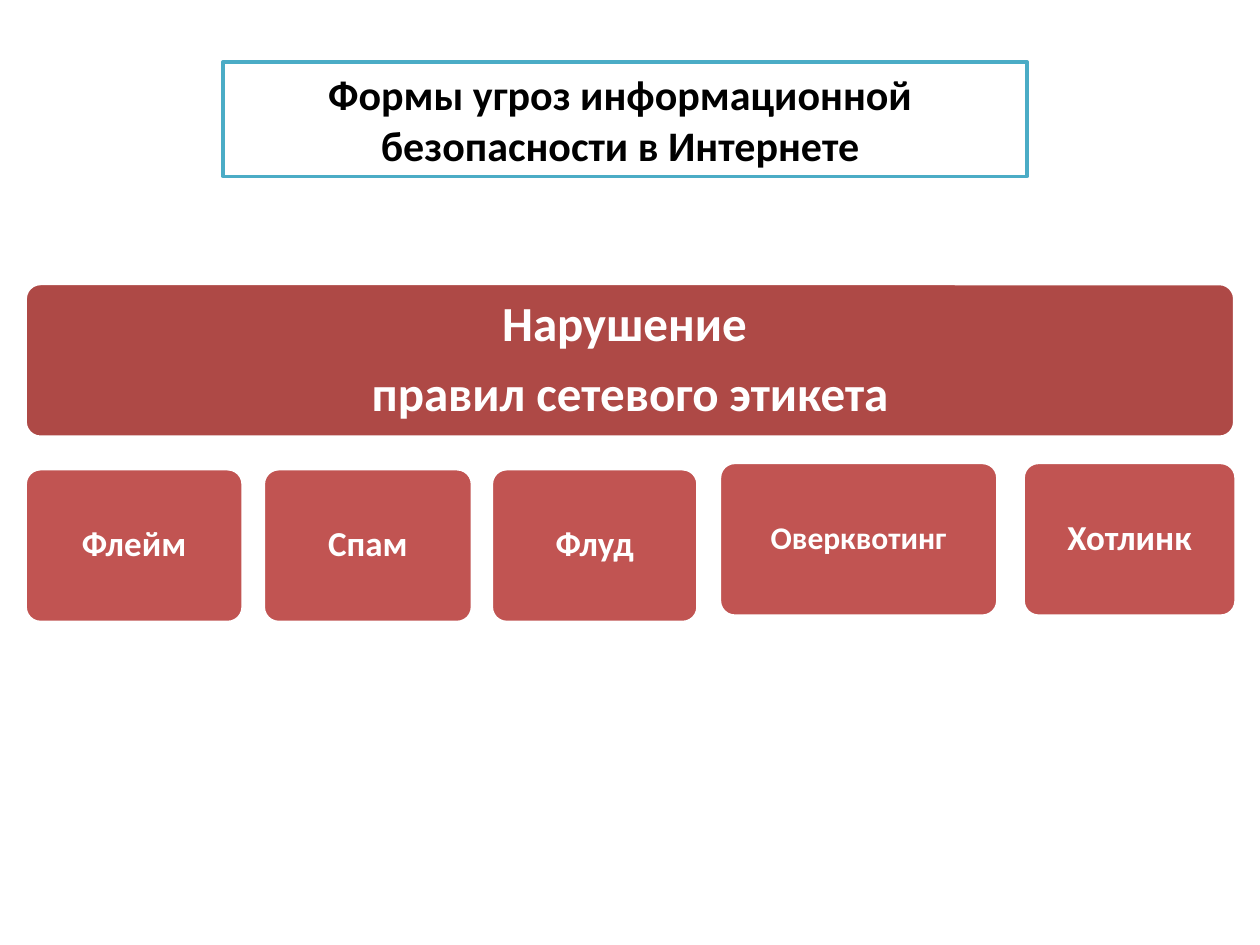
from dataclasses import dataclass

from pptx import Presentation
from pptx.dml.color import RGBColor
from pptx.enum import shapes, text
from pptx.util import Inches, Pt


@dataclass(frozen=True)
class Theme:
    font: str = "Calibri"
    white: RGBColor = RGBColor(0xFF, 0xFF, 0xFF)
    black: RGBColor = RGBColor(0x00, 0x00, 0x00)
    frame: RGBColor = RGBColor(0x4B, 0xAC, 0xC6)
    banner: RGBColor = RGBColor(0xAE, 0x49, 0x46)
    tile: RGBColor = RGBColor(0xC1, 0x54, 0x52)
    title_size: int = 24
    banner_size: int = 28
    tile_size: int = 20
    long_tile_size: int = 18
    line_width: int = 2


THEME = Theme()
CARD_HEIGHT = 1.22


def place(shape, box):
    shape.left, shape.top, shape.width, shape.height = map(Inches, box)


def paint(shape, fill, line):
    shape.fill.solid()
    shape.fill.fore_color.rgb = fill
    shape.line.color.rgb = line
    shape.line.width = Pt(THEME.line_width)


def write_lines(shape, lines, size, color, line_spacing=1.0, gap=0):
    frame = shape.text_frame
    frame.word_wrap = True
    frame.auto_size = text.MSO_AUTO_SIZE.NONE
    frame.vertical_anchor = text.MSO_ANCHOR.MIDDLE
    for index, line in enumerate(lines):
        paragraph = frame.add_paragraph() if index else frame.paragraphs[0]
        paragraph.alignment = text.PP_ALIGN.CENTER
        paragraph.line_spacing = line_spacing
        if index < len(lines) - 1:
            paragraph.space_after = Pt(gap)
        run = paragraph.add_run()
        run.text = line
        run.font.name = THEME.font
        run.font.size = Pt(size)
        run.font.bold = True
        run.font.color.rgb = color


def add_title(slide, box):
    title = slide.shapes.title
    place(title, box)
    paint(title, THEME.white, THEME.frame)
    lines = ["Формы угроз информационной ", "безопасности в Интернете "]
    write_lines(title, lines, THEME.title_size, THEME.black)


def add_card(slide, box, lines, fill, size):
    card = slide.shapes.add_shape(
        shapes.MSO_SHAPE.ROUNDED_RECTANGLE, *map(Inches, box))
    card.adjustments[0] = 0.1
    card.shadow.inherit = False
    paint(card, fill, THEME.white)
    write_lines(card, lines, size, THEME.white, line_spacing=0.9, gap=0.35 * size)


def add_banner(slide, box):
    lines = ["Нарушение ", "правил сетевого этикета"]
    add_card(slide, box, lines, THEME.banner, THEME.banner_size)


def add_tiles(slide, box):
    left, top, _, height = box
    raised = -0.05
    tiles = [
        ("Флейм", 0, 1.73, 0, THEME.tile_size),
        ("Спам", 1.89, 1.66, 0, THEME.tile_size),
        ("Флуд", 3.7, 1.64, 0, THEME.tile_size),
        ("Оверквотинг", 5.51, 2.21, raised, THEME.long_tile_size),
        ("Хотлинк", 7.92, 1.69, raised, THEME.tile_size),
    ]
    for label, offset, width, shift, size in tiles:
        tile_box = (left + offset, top + shift, width, height)
        add_card(slide, tile_box, [label], THEME.tile, size)


def main():
    presentation = Presentation()
    presentation.slide_width = Inches(10)
    presentation.slide_height = Inches(7.5)
    slide = presentation.slides.add_slide(presentation.slide_layouts[5])
    add_banner(slide, (0.2, 2.25, 9.6, CARD_HEIGHT))
    add_tiles(slide, (0.2, 3.72, 9.6, CARD_HEIGHT))
    add_title(slide, (1.77, 0.49, 6.38, 0.91))
    presentation.save("out.pptx")


if __name__ == "__main__":
    main()
